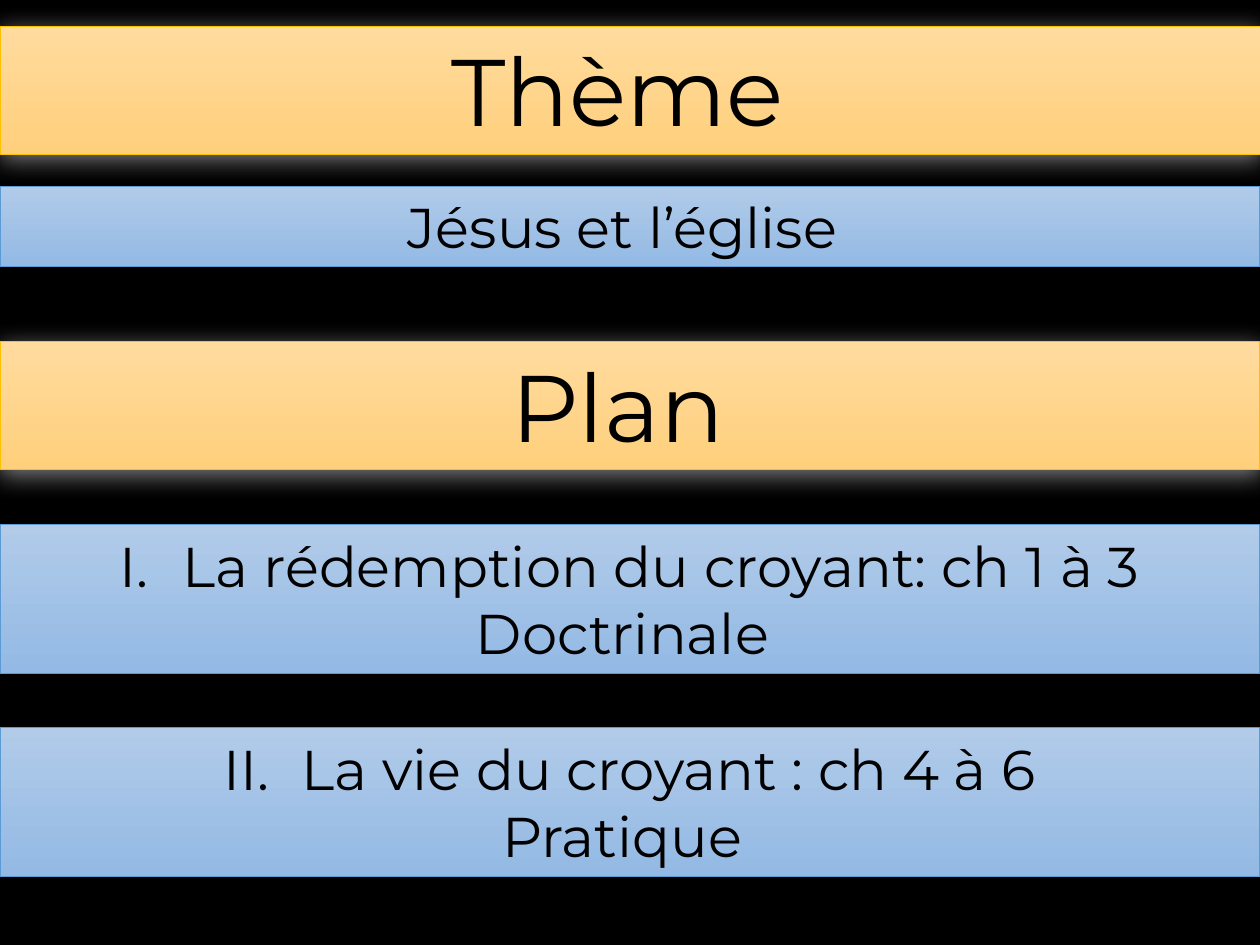
from lxml import etree
from pptx import Presentation
from pptx import util as u
from pptx.dml.color import RGBColor
from pptx.enum import shapes, text
from pptx.oxml.ns import qn

PX = 914400 // 126
W, H = 1260, 945
FONT = "Montserrat"
COLORS = {"back": "000000", "text": "000000", "glow": "808080"}
STYLES = {
    "heading": {"stops": ("FFDB9E", "FFD07C"), "line": "FFC000", "size": 54},
    "body": {"stops": ("B1CBE9", "93B9E4"), "line": "5B9BD5", "size": 32},
}

# style, top, height, paragraphs
BARS = [
    ("heading", 26, 128, ["Thème "]),
    ("body", 186, 81, ["Jésus et l’église "]),
    ("heading", 342, 128, ["Plan "]),
    ("body", 525, 149, ["I.\tLa rédemption du croyant: ch 1 à 3 Doctrinale "]),
    ("body", 728, 149, ["La vie du croyant : ch 4 à 6", "Pratique "]),
]
NUMBERED = BARS[-1][3][0]
INDENT = 78


def rgb(value):
    return RGBColor.from_string(value)


def add_glow(sp):
    """Soft grey blur around a heading bar."""
    effects = sp._element.spPr.find(qn("a:effectLst"))
    shadow = etree.SubElement(effects, qn("a:outerShdw"), blurRad=str(24 * PX),
                              dist=str(4 * PX), dir="5400000", algn="ctr", rotWithShape="0")
    etree.SubElement(shadow, qn("a:srgbClr"), val=COLORS["glow"])


def number_from_two(p):
    pPr = p._p.get_or_add_pPr()
    pPr.set("marL", str(INDENT * PX))
    pPr.set("indent", str(-INDENT * PX))
    etree.SubElement(pPr, qn("a:buFont"), typeface="+mj-lt")
    etree.SubElement(pPr, qn("a:buAutoNum"), type="romanUcPeriod", startAt="2")


def format_bar(sp, style, top, height, lines):
    sp.left, sp.top, sp.width, sp.height = 0, top * PX, W * PX, height * PX
    sp.fill.gradient()
    sp.fill.gradient_angle = 270
    for stop, color in zip(sp.fill.gradient_stops, style["stops"]):
        stop.color.rgb = rgb(color)
    sp.line.color.rgb = rgb(style["line"])
    sp.line.width = u.Pt(0.5)

    tf = sp.text_frame
    tf.text = "\n".join(lines)
    tf.word_wrap = True
    tf.auto_size = text.MSO_AUTO_SIZE.SHAPE_TO_FIT_TEXT
    tf.vertical_anchor = text.MSO_ANCHOR.TOP
    for p in tf.paragraphs:
        p.alignment = text.PP_ALIGN.CENTER
        if p.text == NUMBERED:
            number_from_two(p)
        for r in p.runs:
            r.font.name = FONT
            r.font.size = u.Pt(style["size"])
            r.font.color.rgb = rgb(COLORS["text"])


def main():
    prs = Presentation()
    prs.slide_width, prs.slide_height = W * PX, H * PX
    s = prs.slides.add_slide(prs.slide_layouts[5])
    s.background.fill.solid()
    s.background.fill.fore_color.rgb = rgb(COLORS["back"])

    # The first bar is the slide title, the others are rectangles
    for i, (kind, top, height, lines) in enumerate(BARS):
        if i == 0:
            sp = s.shapes.title
        else:
            sp = s.shapes.add_shape(shapes.MSO_SHAPE.RECTANGLE, 0, 0, PX, PX)
        format_bar(sp, STYLES[kind], top, height, lines)
        sp.shadow.inherit = False
        if kind == "heading":
            add_glow(sp)

    prs.save("out.pptx")


if __name__ == "__main__":
    main()
